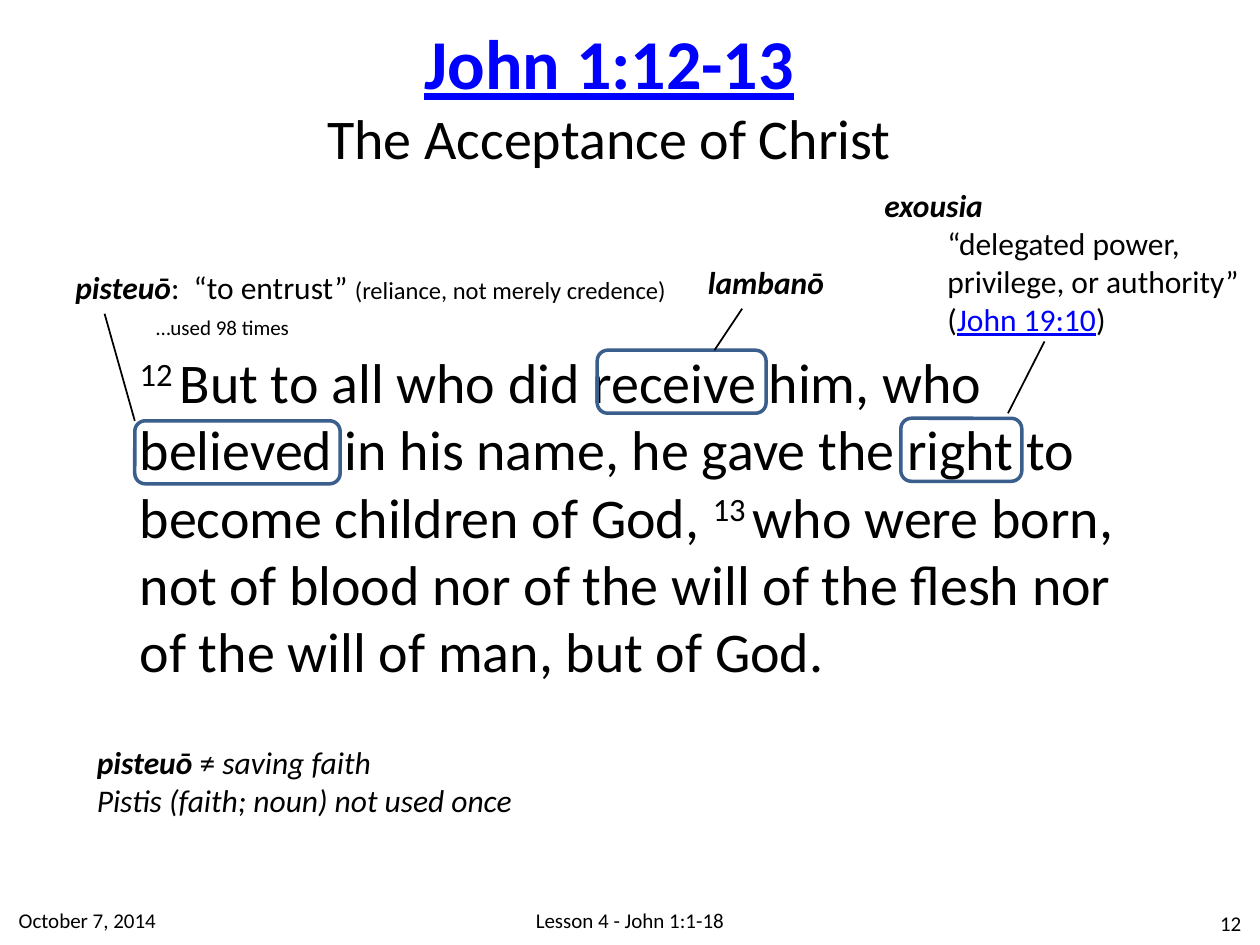
import pptx
import pptx.dml.color
import pptx.enum.shapes
import pptx.enum.text
import pptx.oxml
import pptx.oxml.ns
import pptx.util
from pptx.util import Inches

ALIGN = pptx.enum.text.PP_ALIGN
ANCHOR = pptx.enum.text.MSO_ANCHOR
BLACK, LINK_BLUE, BOX_BLUE = "000000", "0000FF", "3A5F8C"


def color(value):
    return pptx.dml.color.RGBColor.from_string(value)


def run(text, size=18, bold=False, italic=False, underline=False,
        fill=BLACK, raised=False):
    """Describe one piece of formatted text."""
    return dict(text=text, size=size, bold=bold, italic=italic,
                underline=underline, fill=fill, raised=raised)


class SlideBuilder:
    font = "Calibri"

    def __init__(self, page):
        self.page = page

    def text(self, left, top, width, height, *paragraphs,
             align=ALIGN.LEFT, anchor=ANCHOR.TOP, wrap=True):
        """Add a text box; each paragraph is a list of runs."""
        box = self.page.shapes.add_textbox(
            Inches(left), Inches(top), Inches(width), Inches(height))
        frame = box.text_frame
        frame.word_wrap = wrap
        frame.vertical_anchor = anchor
        for index, runs in enumerate(paragraphs):
            para = frame.add_paragraph() if index else frame.paragraphs[0]
            para.alignment = align
            for item in runs:
                self.span(para, item)

    def span(self, para, item):
        span = para.add_run()
        span.text = item["text"]
        font = span.font
        font.name = self.font
        font.size = pptx.util.Pt(item["size"])
        font.bold = item["bold"]
        font.italic = item["italic"]
        font.underline = item["underline"]
        font.color.rgb = color(item["fill"])
        if item["raised"]:
            span._r.get_or_add_rPr().set("baseline", "30000")

    def word_box(self, left, top, width, height=0.5):
        """Outline a word of the verse."""
        box = self.page.shapes.add_shape(
            pptx.enum.shapes.MSO_SHAPE.ROUNDED_RECTANGLE,
            Inches(left), Inches(top), Inches(width), Inches(height))
        box.shadow.inherit = False
        box.fill.background()
        box.line.color.rgb = color(BOX_BLUE)
        box.line.width = pptx.util.Pt(2)

    def line(self, x1, y1, x2, y2):
        line = self.page.shapes.add_connector(
            pptx.enum.shapes.MSO_CONNECTOR.STRAIGHT,
            Inches(x1), Inches(y1), Inches(x2), Inches(y2))
        line.line.color.rgb = color(BLACK)
        line.line.width = pptx.util.Pt(1)
        line._element.spPr.append(pptx.oxml.parse_xml(
            "<a:effectLst %s/>" % pptx.oxml.ns.nsdecls("a")))


def main():
    deck = pptx.Presentation()
    deck.slide_width, deck.slide_height = Inches(10), Inches(7.5)
    slide = SlideBuilder(deck.slides.add_slide(deck.slide_layouts[6]))

    # Footer
    for left, top, width, align, words in (
            (1.71, 7.1, 6.58, ALIGN.CENTER, "Lesson 4 - John 1:1-18"),
            (0.05, 7.1, 2.03, ALIGN.LEFT, "October 7, 2014"),
            (9.2, 7.13, 0.75, ALIGN.RIGHT, "12")):
        slide.text(left, top, width, 0.4, [run(words, size=12)],
                   align=align, anchor=ANCHOR.MIDDLE)

    # Title
    slide.text(2.09, 0.1, 5.49, 1.31,
               [run("John 1:12-13", size=40, bold=True, underline=True,
                    fill=LINK_BLUE)],
               [run("The Acceptance of Christ", size=32)],
               align=ALIGN.CENTER, anchor=ANCHOR.MIDDLE)

    # Verses
    slide.text(1.01, 2.71, 8.18, 2.79, [
        run("12\u00a0", size=32, raised=True),
        run("But to all who did receive him, who believed in his name, "
            "he gave the right to become children of God, ", size=32),
        run("13\u00a0", size=32, raised=True),
        run("who were born, not of blood nor of the will of the flesh nor "
            "of the will of man, but of God.", size=32)])

    # Boxed words: receive, believed, right
    for left, top, width in ((4.74, 2.78, 1.34), (1.07, 3.34, 1.63),
                             (7.15, 3.32, 0.96)):
        slide.word_box(left, top, width)

    # Lines from the boxed words to their Greek terms
    for ends in ((5.67, 2.78, 5.89, 2.45), (1.07, 3.34, 0.83, 2.49),
                 (8, 3.28, 8.29, 2.71)):
        slide.line(*ends)

    # Greek terms and meanings
    slide.text(0.5, 2.08, 5, 0.4, [
        run("pisteuō", bold=True, italic=True),
        run(":  “to entrust” "),
        run("(reliance, not merely credence)", size=14)], wrap=False)
    slide.text(1.14, 2.45, 1.27, 0.3, [run("…used 98 times", size=12)],
               wrap=False)
    slide.text(5.52, 2.04, 1.13, 0.4,
               [run("lambanō", bold=True, italic=True)], wrap=False)
    slide.text(6.92, 1.43, 0.99, 0.4,
               [run("exousia", bold=True, italic=True)], wrap=False)
    slide.text(7.42, 1.73, 2.61, 1.01,
               [run("“delegated power, privilege, or authority”")],
               [run("("), run("John 19:10", underline=True, fill=LINK_BLUE),
                run(")")])

    # Note on faith
    slide.text(0.67, 5.85, 3.54, 0.71,
               [run("pisteuō ", bold=True, italic=True), run("≠ "),
                run("saving faith", italic=True)],
               [run("Pistis (faith; noun) not used once", italic=True)],
               wrap=False)

    deck.save("out.pptx")


if __name__ == "__main__":
    main()
